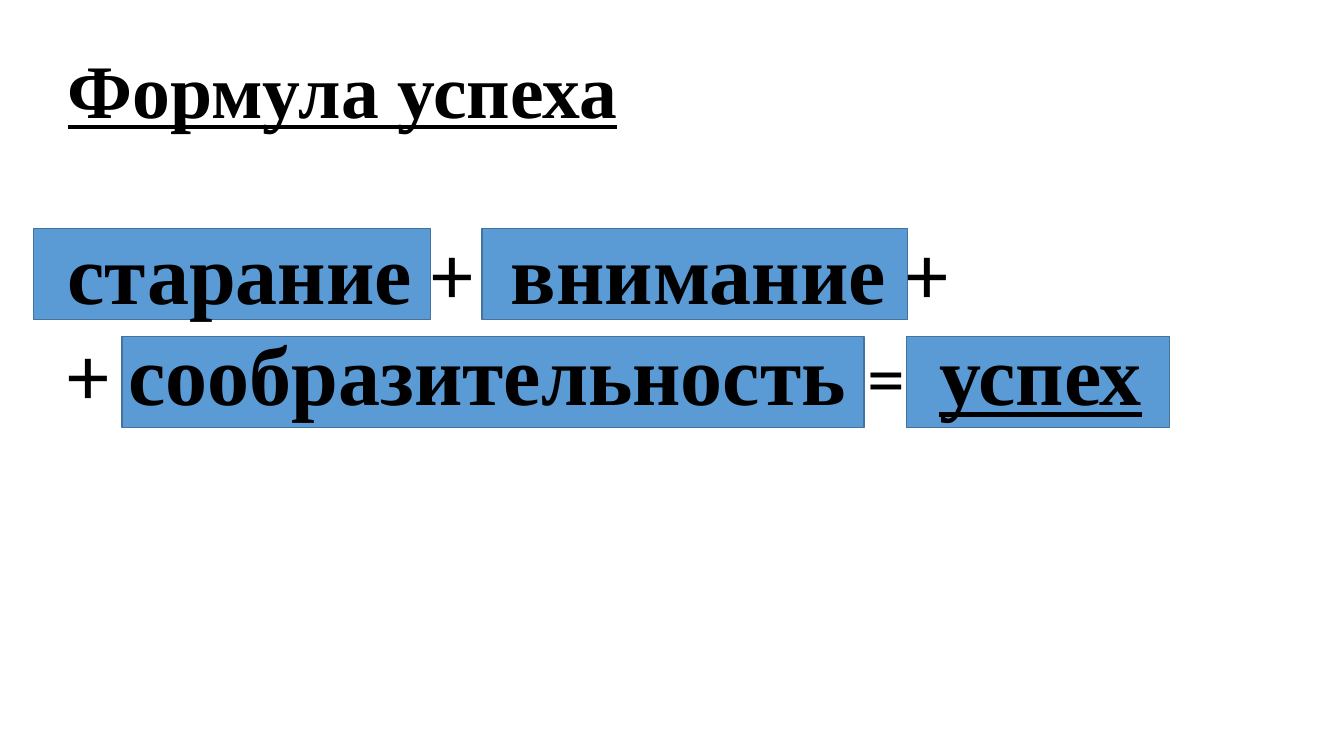
import pptx
import pptx.dml.color
import pptx.enum.shapes
import pptx.enum.text
import pptx.util

Inches = pptx.util.Inches
Pt = pptx.util.Pt


def color(value):
    return pptx.dml.color.RGBColor.from_string(value)


class FormulaSlide:
    word_font = "Times New Roman"
    sign_font = "Calibri"
    text_color = "000000"
    fill_color = "5B9BD5"
    line_color = "43739E"

    def __init__(self, prs):
        self.slide = prs.slides.add_slide(prs.slide_layouts[5])

    def box(self, left, top, width, height=0.9):
        sp = self.slide.shapes.add_shape(
            pptx.enum.shapes.MSO_SHAPE.RECTANGLE,
            Inches(left), Inches(top), Inches(width), Inches(height))
        sp.shadow.inherit = False
        sp.fill.solid()
        sp.fill.fore_color.rgb = color(self.fill_color)
        sp.line.color.rgb = color(self.line_color)
        sp.line.width = Pt(1)

    def title(self, left, top, width, height):
        sp = self.slide.shapes.title
        sp.left, sp.top = Inches(left), Inches(top)
        sp.width, sp.height = Inches(width), Inches(height)
        self.slide.shapes._spTree.append(sp._element)
        tf = sp.text_frame
        tf.word_wrap = True
        tf.auto_size = pptx.enum.text.MSO_AUTO_SIZE.SHAPE_TO_FIT_TEXT
        tf.vertical_anchor = pptx.enum.text.MSO_ANCHOR.BOTTOM
        return tf

    def paragraph(self, p, space_after=0):
        p.alignment = pptx.enum.text.PP_ALIGN.LEFT
        p.line_spacing = 1.0
        p.space_before = Pt(0)
        p.space_after = Pt(space_after)
        return p

    def run(self, p, text, size, bold, underline=False):
        r = p.add_run()
        r.text = text
        r.font.name = self.word_font if bold else self.sign_font
        r.font.size = Pt(size)
        r.font.bold = bold
        r.font.underline = underline
        r.font.color.rgb = color(self.text_color)

    def word(self, p, text, size=60, underline=False):
        self.run(p, text, size, True, underline)

    def sign(self, p, text, size=60):
        self.run(p, text, size, False)


def main():
    prs = pptx.Presentation()
    prs.slide_width = Inches(13.33)
    prs.slide_height = Inches(7.5)
    s = FormulaSlide(prs)

    first_row, second_row = 2.27, 3.34
    for left, top, width in [(8.99, second_row, 2.61), (4.78, first_row, 4.22),
                             (0.33, first_row, 3.94), (1.21, second_row, 7.36)]:
        s.box(left, top, width)

    tf = s.title(0.57, 0.3, 12.13, 3.94)
    p = s.paragraph(tf.paragraphs[0], space_after=62)
    s.word(p, "Формула успеха", 54, underline=True)

    p = s.paragraph(tf.add_paragraph())
    s.word(p, "старание")
    s.sign(p, " +  ")
    s.word(p, "внимание ")
    s.sign(p, "+")

    p = s.paragraph(tf.add_paragraph())
    s.sign(p, "+ ")
    s.word(p, "сообразительность ")
    s.sign(p, "=  ", 54)
    s.word(p, "успех", underline=True)

    prs.save("out.pptx")


if __name__ == "__main__":
    main()
